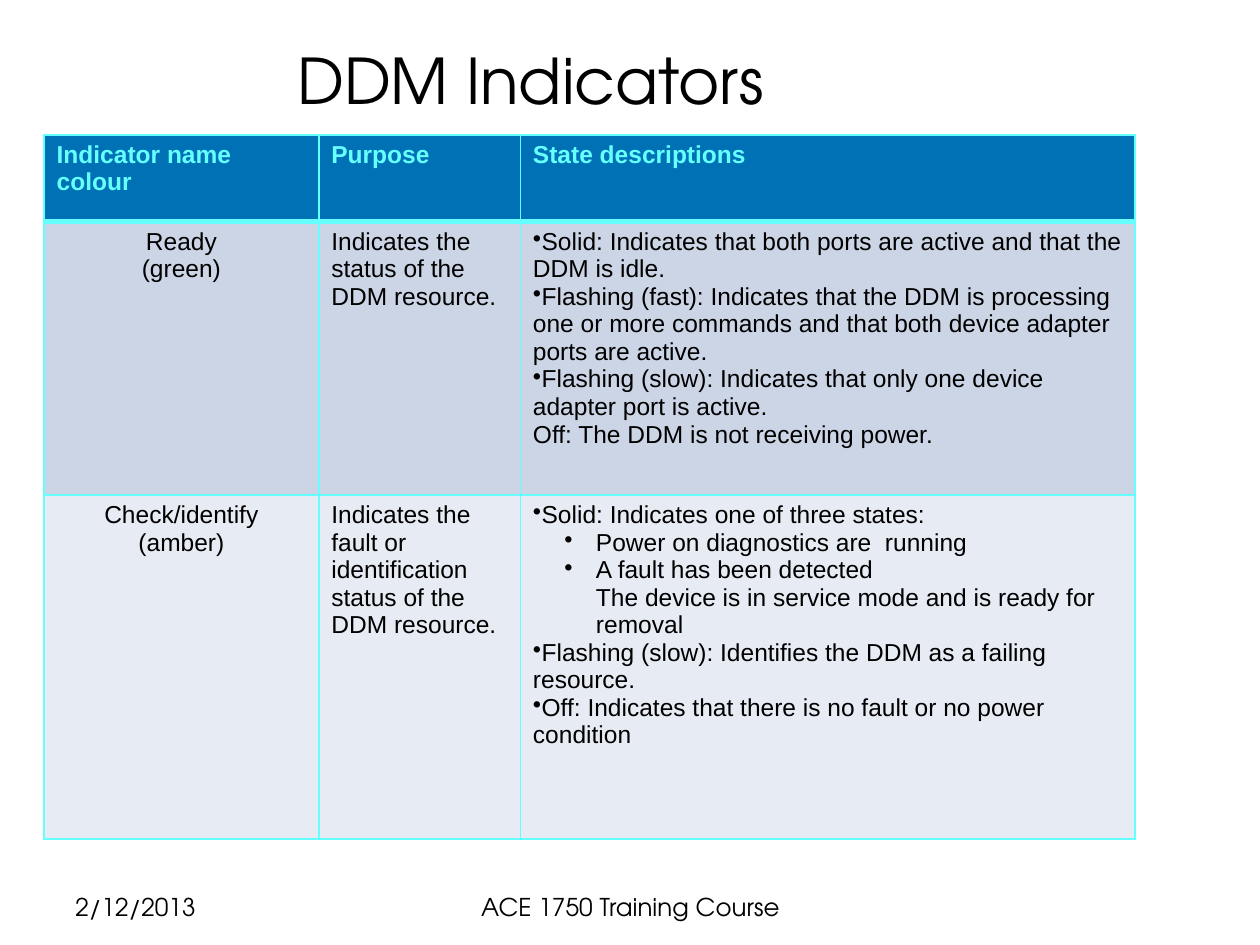
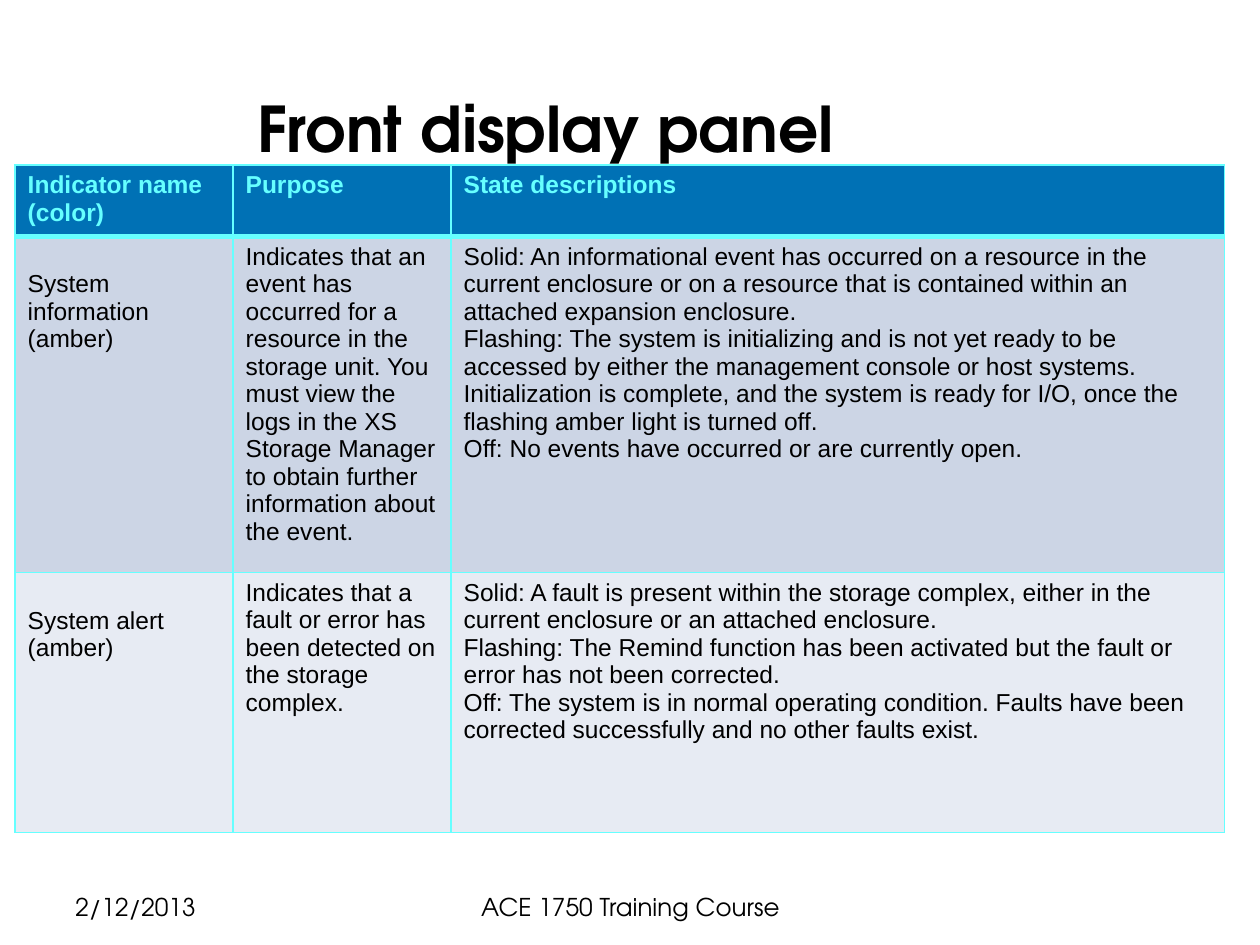
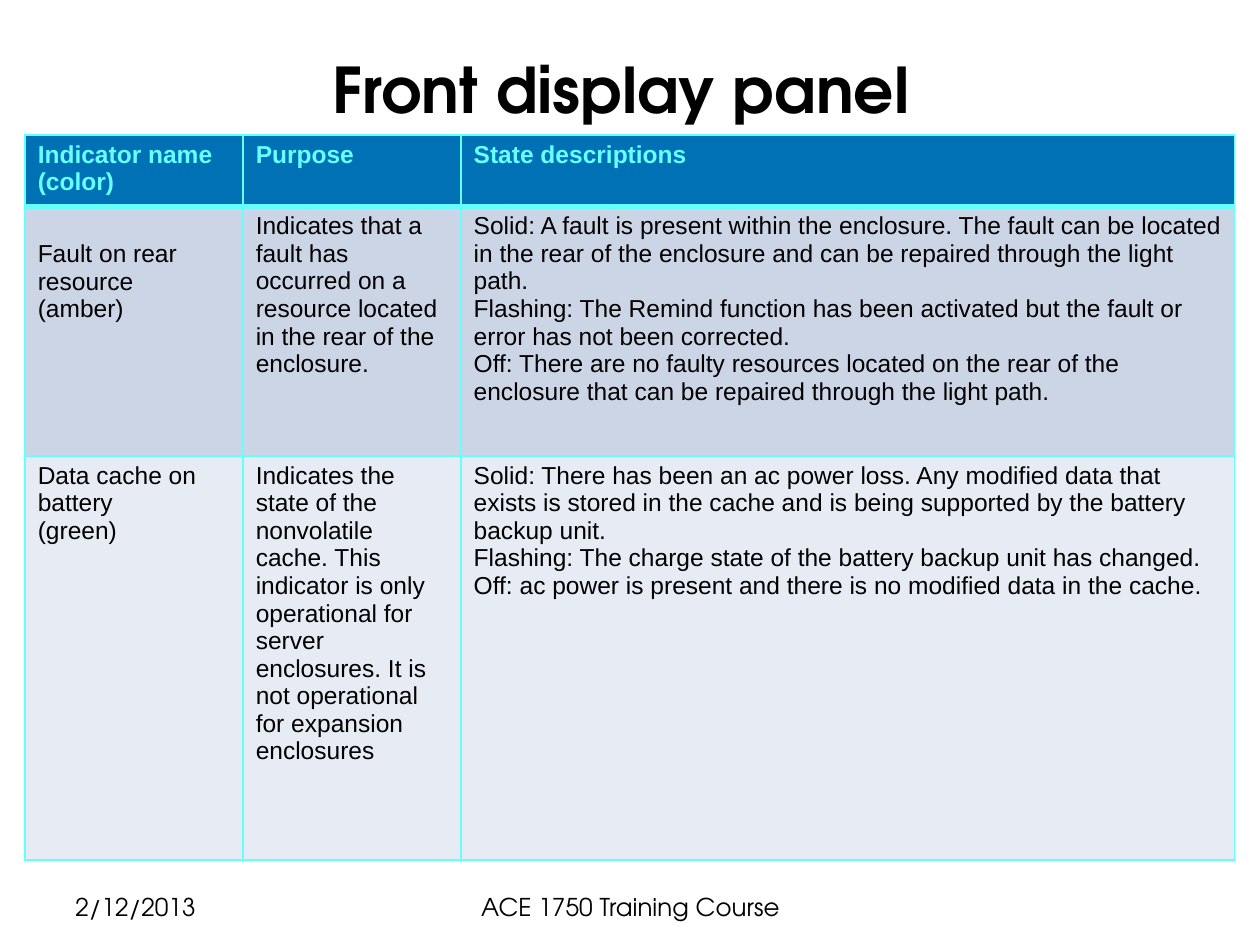
from copy import deepcopy

from lxml import etree
from pptx import Presentation
from pptx import util as u
from pptx.dml.color import RGBColor
from pptx.enum import text
from pptx.oxml import ns

# Slide grid: 100 columns by 75 rows
WIDTH, HEIGHT = u.Inches(10), u.Inches(7.5)
COL, ROW = WIDTH / 100, HEIGHT / 75

# Shared look
BLACK, CYAN, BLUE = "000000", "66FFFF", "0071B5"
BANDS = ["CCD5E5", "E7EBF3"]
DISPLAY, BODY = "TeX Gyre Adventor", "Arial"
LEFT, CENTER = text.PP_ALIGN.LEFT, text.PP_ALIGN.CENTER
THIN, THICK = u.Pt(1), u.Pt(3)

# Shared footer: text, box, alignment
FOOTERS = [
    ("2/12/2013", (5, 70.3, 23.3, 3.2), LEFT),
    ("ACE 1750 Training Course", (34.2, 70.3, 31.7, 3.2), CENTER),
]

# Bullet styles: left margin and first-line indent in inches
BULLETS = {"•": (0, 0), "-": (0.5, -0.25), ">": (0.5, 0)}


def rgb(value):
    return RGBColor.from_string(value)


def on_grid(box):
    x, y, w, h = box
    return [u.Emu(round(n)) for n in (x * COL, y * ROW, w * COL, h * ROW)]


def set_bullet(p, mark):
    left, indent = BULLETS[mark]
    pPr = p._p.get_or_add_pPr()
    pPr.set("marL", str(u.Inches(left)))
    pPr.set("indent", str(u.Inches(indent)))
    if mark == ">":
        etree.SubElement(pPr, ns.qn("a:buNone"))
    else:
        etree.SubElement(pPr, ns.qn("a:buChar"), char="•")


def write(tf, lines, size=14, font=BODY, color=BLACK, bold=False,
          align=LEFT, spacing=None):
    """Fill a text frame, one paragraph a line; a leading mark sets a bullet."""
    tf.word_wrap = True
    for i, line in enumerate(lines):
        p = tf.paragraphs[0] if i == 0 else tf.add_paragraph()
        if line[0] in BULLETS:
            set_bullet(p, line[0])
            line = line[1:]
        p.text = line
        p.alignment = align
        if spacing:
            p.line_spacing = spacing
        for r in p.runs:
            r.font.size, r.font.name, r.font.bold = u.Pt(size), font, bold
            r.font.color.rgb = rgb(color)
        for br in p._p.findall(ns.qn("a:br")):
            br.append(deepcopy(p.runs[0]._r.rPr))


def add_text(s, box, line, anchor=text.MSO_ANCHOR.TOP, **fmt):
    tf = s.shapes.add_textbox(*on_grid(box)).text_frame
    tf.vertical_anchor = anchor
    write(tf, [line], font=DISPLAY, **fmt)


def set_borders(cell, top, bottom):
    tcPr = cell._tc.get_or_add_tcPr()
    for side, width in zip("LRTB", (THIN, THIN, top, bottom)):
        ln = etree.SubElement(tcPr, ns.qn(f"a:ln{side}"), w=str(width))
        fill = etree.SubElement(ln, ns.qn("a:solidFill"))
        etree.SubElement(fill, ns.qn("a:srgbClr"), val=CYAN)


def add_indicator_table(s, corner, widths, heights, header, rows,
                        name_align=LEFT, lowered=()):
    """Indicator table; names in the lowered rows start one line down."""
    box = (*corner, sum(widths), sum(heights))
    table = s.shapes.add_table(len(heights), len(widths), *on_grid(box)).table
    for column, width in zip(table.columns, widths):
        column.width = u.Emu(round(width * COL))
    for row, height in zip(table.rows, heights):
        row.height = u.Emu(round(height * ROW))

    for i, contents in enumerate([header, *rows]):
        for j, content in enumerate(contents):
            cell = table.cell(i, j)
            set_borders(cell, THICK if i == 1 else THIN,
                        THICK if i == 0 else THIN)
            cell.fill.solid()
            cell.fill.fore_color.rgb = rgb(BANDS[i - 1] if i else BLUE)
            lines = [content] if isinstance(content, str) else content
            if i == 0:
                write(cell.text_frame, lines, color=CYAN, bold=True)
            else:
                write(cell.text_frame, lines,
                      align=name_align if j == 0 else LEFT)
            if j == 0 and i in lowered:
                cell.margin_top = u.Inches(0.27)


def add_indicator_slide(prs, title, title_box, bold=True, **table):
    s = prs.slides.add_slide(prs.slide_layouts[6])
    add_text(s, title_box, title, anchor=text.MSO_ANCHOR.BOTTOM, size=36,
             bold=bold, align=CENTER, spacing=0.9)
    add_indicator_table(s, **table)
    for line, box, align in FOOTERS:
        add_text(s, box, line, align=align)


# Table contents: indicator name, purpose, state descriptions
DDM_ROWS = [
    ("Ready\n(green)",
     "Indicates the status of the DDM resource.",
     ["•Solid: Indicates that both ports are active and that the DDM is idle.",
      "•Flashing (fast): Indicates that the DDM is processing one or more "
      "commands and that both device adapter ports are active.",
      "•Flashing (slow): Indicates that only one device adapter port is "
      "active.",
      "Off: The DDM is not receiving power."]),
    ("Check/identify\n(amber)",
     "Indicates the fault or identification status of the DDM resource.",
     ["•Solid: Indicates one of three states:",
      "-Power on diagnostics are  running",
      "-A fault has been detected",
      ">The device is in service mode and is ready for removal",
      "•Flashing (slow): Identifies the DDM as a failing resource.",
      "•Off: Indicates that there is no fault or no power condition"]),
]

REMIND = ("Flashing: The Remind function has been activated but the fault or "
          "error has not been corrected.")

SYSTEM_ROWS = [
    ("System\ninformation\n(amber)",
     "Indicates that an event has occurred for a resource in the storage "
     "unit. You must view the logs in the XS Storage Manager to obtain "
     "further information about the event.",
     ["Solid: An informational event has occurred on a resource in the "
      "current enclosure or on a resource that is contained within an "
      "attached expansion enclosure.",
      "Flashing: The system is initializing and is not yet ready to be "
      "accessed by either the management console or host systems. "
      "Initialization is complete, and the system is ready for I/O, once the "
      "flashing amber light is turned off.",
      "Off: No events have occurred or are currently open."]),
    ("System alert\n(amber)",
     "Indicates that a fault or error has been detected on the storage "
     "complex.",
     ["Solid: A fault is present within the storage complex, either in the "
      "current enclosure or an attached enclosure.",
      REMIND,
      "Off: The system is in normal operating condition. Faults have been "
      "corrected successfully and no other faults exist."]),
]

RESOURCE_ROWS = [
    ("Fault on rear\nresource\n(amber)",
     "Indicates that a fault has occurred on a resource located in the rear "
     "of the enclosure.",
     ["Solid: A fault is present within the enclosure. The fault can be "
      "located in the rear of the enclosure and can be repaired through the "
      "light path.",
      REMIND,
      "Off: There are no faulty resources located on the rear of the "
      "enclosure that can be repaired through the light path."]),
    ("Data cache on\nbattery\n(green)",
     "Indicates the state of the nonvolatile cache. This indicator is only "
     "operational for server enclosures. It is not operational for expansion "
     "enclosures",
     ["Solid: There has been an ac power loss. Any modified data that exists "
      "is stored in the cache and is being supported by the battery backup "
      "unit.",
      "Flashing: The charge state of the battery backup unit has changed.",
      "Off: ac power is present and there is no modified data in the "
      "cache."]),
]


def main():
    prs = Presentation()
    prs.slide_width, prs.slide_height = WIDTH, HEIGHT

    # Disk drive indicators
    add_indicator_slide(
        prs, "DDM Indicators", (5.1, 0, 74, 9.9), bold=False,
        corner=(3.5, 10.7), widths=(21.8, 16, 48.8),
        heights=(6.9, 21.7, 27.3),
        header=("Indicator name colour", "Purpose", "State descriptions"),
        rows=DDM_ROWS, name_align=CENTER)

    # Front panel, two slides with the same columns
    panel = dict(
        widths=(17.3, 17.3, 61.4),
        header=("Indicator name (color)", "Purpose", "State descriptions"))
    add_indicator_slide(
        prs, "Front display panel", (4.7, 1.2, 77.2, 12.5),
        corner=(1.2, 13.1), heights=(4.7, 17.4, 20.6),
        rows=SYSTEM_ROWS, lowered=(1, 2), **panel)
    add_indicator_slide(
        prs, "Front display panel", (4.3, 1.3, 90, 9.3),
        corner=(2, 10.7), heights=(4.7, 19.8, 32.1),
        rows=RESOURCE_ROWS, lowered=(1,), **panel)

    prs.save("out.pptx")


if __name__ == "__main__":
    main()
